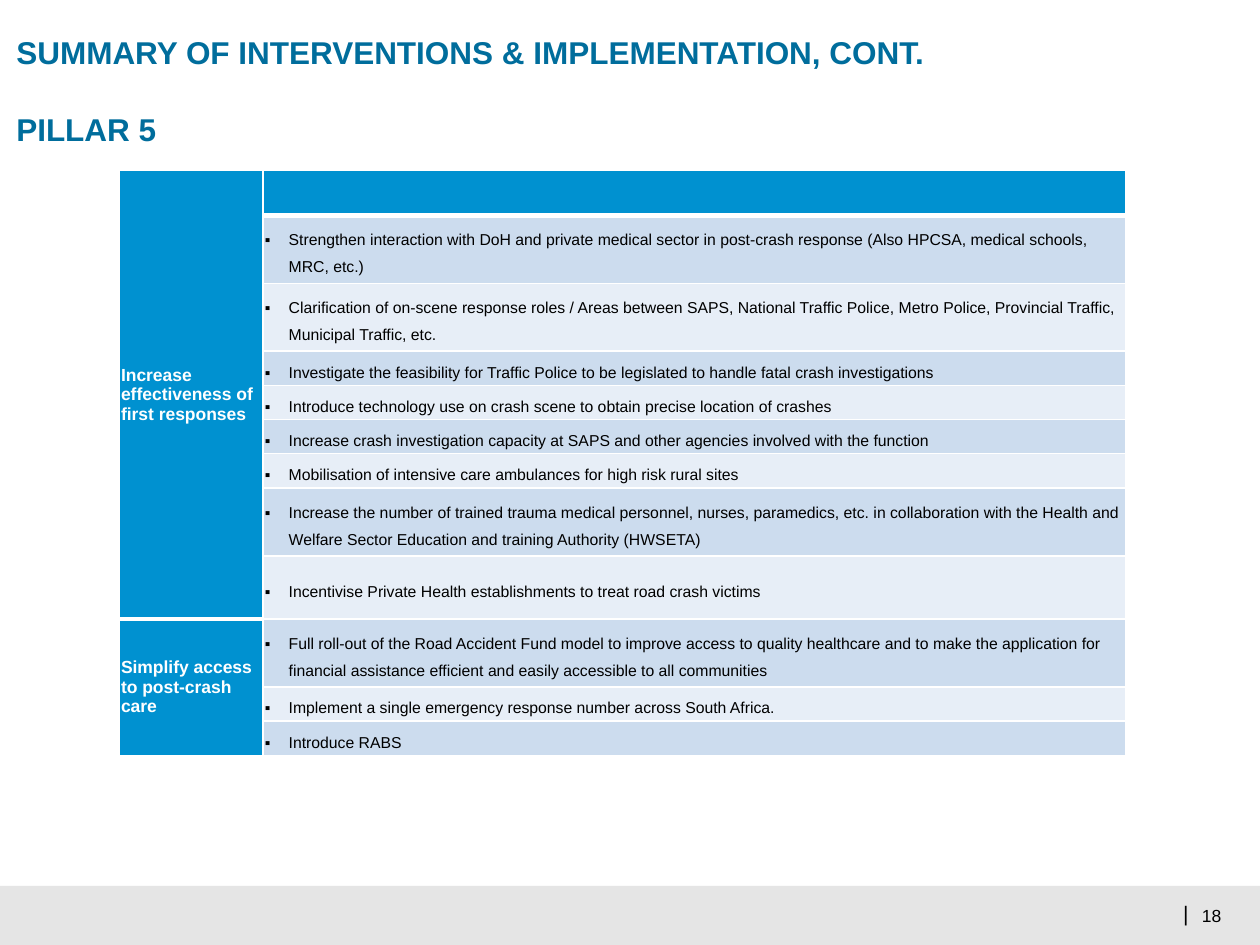
from lxml.etree import SubElement
from pptx import Presentation
from pptx.dml.color import RGBColor
from pptx.enum.shapes import MSO_SHAPE
from pptx.enum.text import MSO_ANCHOR as Anchor, PP_ALIGN as Align
from pptx.oxml.ns import qn
from pptx.util import Cm, Pt

WHITE = RGBColor(0xFF, 0xFF, 0xFF)
BLACK = RGBColor(0, 0, 0)
TITLE_BLUE = RGBColor(0x00, 0x6D, 0x9C)
HEADER_BLUE = RGBColor(0x00, 0x91, 0xD0)
BANDS = (RGBColor(0xCC, 0xDC, 0xEE), RGBColor(0xE7, 0xEE, 0xF7))
FOOTER_GREY = RGBColor(0xE5, 0xE5, 0xE5)

HEADER_HEIGHT, ONE_LINE, SPACED_LINE, TWO_LINES = 0.91, 0.69, 1.18, 1.37
THIN, THICK = Pt(1), Pt(3)

TITLE_LINES = ("SUMMARY OF INTERVENTIONS & IMPLEMENTATION, CONT.", "PILLAR 5")
RESPONSES = (
    ("Strengthen interaction with DoH and private medical sector in post-crash "
     "response (Also HPCSA, medical schools, MRC, etc.)", TWO_LINES),
    ("Clarification of on-scene response roles / Areas between SAPS, National "
     "Traffic Police, Metro Police, Provincial Traffic, Municipal Traffic, etc.", TWO_LINES),
    ("Investigate the feasibility for Traffic Police to be legislated to handle "
     "fatal crash investigations", ONE_LINE),
    ("Introduce technology use on crash scene to obtain precise location of crashes", ONE_LINE),
    ("Increase crash investigation capacity at SAPS and other agencies involved "
     "with the function", ONE_LINE),
    ("Mobilisation of intensive care ambulances for high risk rural sites", ONE_LINE),
    ("Increase the number of trained trauma medical personnel, nurses, paramedics, "
     "etc. in collaboration with the Health and Welfare Sector Education and "
     "training Authority (HWSETA)", TWO_LINES),
    ("Incentivise Private Health establishments to treat road crash victims", SPACED_LINE),
)
ACCESS = (
    ("Full roll-out of the Road Accident Fund model to improve access to quality "
     "healthcare and to make the application for financial assistance efficient "
     "and easily accessible to all communities", TWO_LINES),
    ("Implement a single emergency response number across South Africa.", ONE_LINE),
    ("Introduce RABS", ONE_LINE),
)


def style_font(paragraph, size, color, bold=False):
    font = paragraph.font
    font.name, font.size, font.bold = "Arial", Pt(size), bold
    font.color.rgb = color


def add_text(slide, box, lines, size, color, bold=False, gap=0,
             align=Align.LEFT, anchor=Anchor.TOP, wrap=True):
    frame = slide.shapes.add_textbox(*map(Cm, box)).text_frame
    frame.word_wrap, frame.vertical_anchor = wrap, anchor
    frame.margin_left = frame.margin_right = frame.margin_top = frame.margin_bottom = 0
    frame.text = "\n".join(lines)
    for index, paragraph in enumerate(frame.paragraphs):
        paragraph.alignment = align
        if index:
            paragraph.space_before = Pt(gap)
        style_font(paragraph, size, color, bold)


def add_footer(slide, left, top, width, height):
    band = slide.shapes.add_shape(MSO_SHAPE.RECTANGLE, *map(Cm, (left, top, width, height)))
    band.shadow.inherit = False
    band.fill.solid()
    band.fill.fore_color.rgb = FOOTER_GREY
    band.line.fill.background()
    right = left + width
    add_text(slide, (right - 1.17, top + 0.38, 0.46, 0.43), ["18"], 10, BLACK,
             anchor=Anchor.MIDDLE, wrap=False)
    add_text(slide, (right - 1.55, top + 0.3, 0.1, 0.51), ["|"], 12, BLACK,
             align=Align.RIGHT, anchor=Anchor.MIDDLE, wrap=False)


def style_cell(cell, fill, bottom=THIN):
    """Give a cell its margins, white borders and fill."""
    cell.margin_left = cell.margin_right = Cm(0.04)
    cell.margin_top = cell.margin_bottom = 0
    cell.vertical_anchor = Anchor.MIDDLE
    properties = cell._tc.get_or_add_tcPr()
    for side, width in (("L", THIN), ("R", THIN), ("T", THIN), ("B", bottom)):
        border = SubElement(properties, qn(f"a:ln{side}"), w=str(width))
        color = SubElement(border, qn("a:solidFill"))
        SubElement(color, qn("a:srgbClr"), val=str(WHITE))
    cell.fill.solid()
    cell.fill.fore_color.rgb = fill


def write_cell(cell, text, size, color, bold=False, bullet=False):
    paragraph = cell.text_frame.paragraphs[0]
    paragraph.text = text
    if bullet:
        properties = paragraph._p.get_or_add_pPr()
        properties.set("marL", str(Cm(0.48)))
        properties.set("indent", str(-Cm(0.48)))
        SubElement(properties, qn("a:buFont"), typeface="Arial")
        SubElement(properties, qn("a:buChar"), char="▪")
        paragraph.line_spacing = 1.5
    paragraph.space_before = paragraph.space_after = Pt(2)
    style_font(paragraph, size, color, bold)


def add_interventions(slide, left, top, width):
    heights = [HEADER_HEIGHT] + [height for _, height in RESPONSES + ACCESS]
    table = slide.shapes.add_table(
        len(heights), 2, *map(Cm, (left, top, width, sum(heights)))).table
    table.columns[0].width, table.columns[1].width = Cm(2.9), Cm(width - 2.9)
    for row, height in zip(table.rows, heights):
        row.height = Cm(height)

    last_response = len(RESPONSES)
    for index in range(len(heights)):
        style_cell(table.cell(index, 0), HEADER_BLUE,
                   THICK if index in (0, last_response) else THIN)
    style_cell(table.cell(0, 1), HEADER_BLUE, THICK)
    for index, (intervention, _) in enumerate(RESPONSES + ACCESS):
        cell = table.cell(index + 1, 1)
        style_cell(cell, BANDS[index % 2])
        write_cell(cell, intervention, 9, BLACK, bullet=True)

    for label, first, last in (
            ("Increase effectiveness of first responses", 0, last_response),
            ("Simplify access to post-crash care", last_response + 1, len(heights) - 1)):
        table.cell(first, 0).merge(table.cell(last, 0))
        write_cell(table.cell(first, 0), label, 10, WHITE, bold=True)


def main():
    deck = Presentation()
    deck.slide_width, deck.slide_height = Cm(25.4), Cm(19.05)
    slide = deck.slides.add_slide(deck.slide_layouts[6])
    add_footer(slide, 0, 17.86, 25.4, 1.19)
    add_text(slide, (0.33, 0.66, 24.77, 2.31), TITLE_LINES, 18, TITLE_BLUE, bold=True, gap=22.7)
    add_interventions(slide, 2.4, 3.43, 20.3)
    deck.save("out.pptx")


if __name__ == "__main__":
    main()
